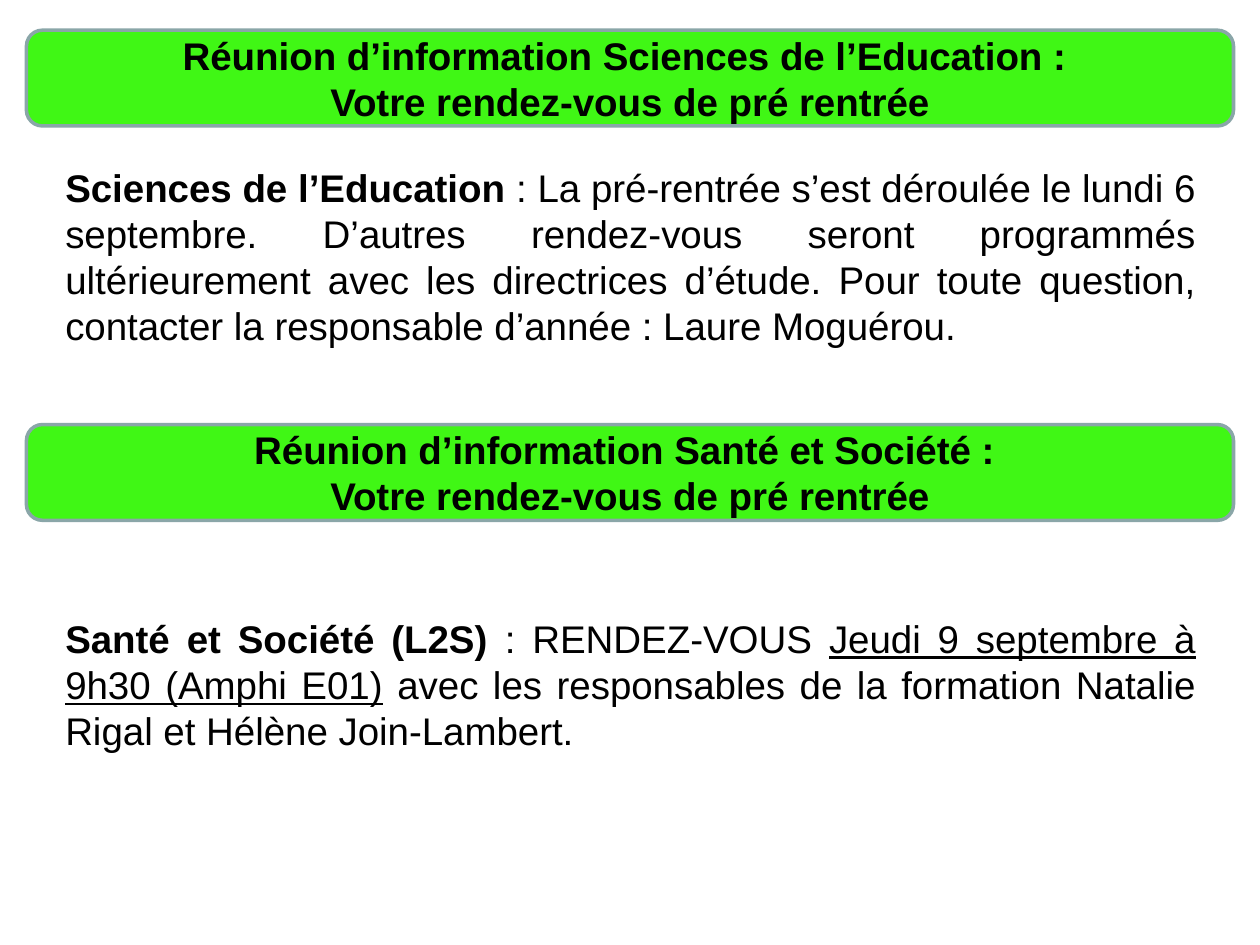
from pptx import Presentation
from pptx.dml.color import RGBColor
from pptx.enum import shapes, text
from pptx.util import Inches, Pt

GREEN = RGBColor(0x40, 0xF7, 0x15)
GREY = RGBColor(0x8A, 0xA6, 0xA8)
BLACK = RGBColor(0, 0, 0)


def add_run(p, words, bold=False, underline=False):
    r = p.add_run()
    r.text = words
    r.font.name = "Arial"
    r.font.size = Pt(22)
    r.font.color.rgb = BLACK
    r.font.bold = bold
    r.font.underline = underline


def add_banner(slide, top, lines):
    sp = slide.shapes.add_shape(
        shapes.MSO_SHAPE.ROUNDED_RECTANGLE,
        Inches(0.21), Inches(top), Inches(9.58), Inches(0.76))
    sp.shadow.inherit = False
    sp.fill.solid()
    sp.fill.fore_color.rgb = GREEN
    sp.line.color.rgb = GREY
    sp.line.width = Pt(2)
    tf = sp.text_frame
    tf.word_wrap = True
    tf.vertical_anchor = text.MSO_ANCHOR.MIDDLE
    for i, line in enumerate(lines):
        p = tf.add_paragraph() if i else tf.paragraphs[0]
        p.alignment = text.PP_ALIGN.CENTER
        add_run(p, line, bold=True)


def add_body(slide, top, height, runs):
    """Add a justified paragraph from (words, bold, underline) runs."""
    sp = slide.shapes.add_textbox(
        Inches(0.42), Inches(top), Inches(9.17), Inches(height))
    tf = sp.text_frame
    tf.word_wrap = True
    tf.auto_size = text.MSO_AUTO_SIZE.SHAPE_TO_FIT_TEXT
    p = tf.paragraphs[0]
    p.alignment = text.PP_ALIGN.JUSTIFY
    for words, bold, underline in runs:
        add_run(p, words, bold, underline)


def main():
    prs = Presentation()
    prs.slide_width, prs.slide_height = Inches(10), Inches(7.5)
    slide = prs.slides.add_slide(prs.slide_layouts[6])

    subtitle = "Votre rendez-vous de pré rentrée"
    add_body(slide, 1.25, 1.58, [
        ("Sciences de l’Education ", True, False),
        (": La pré-rentrée s’est déroulée le lundi 6 septembre. "
         "D’autres rendez-vous seront programmés ultérieurement avec les "
         "directrices d’étude. Pour toute question, contacter la "
         "responsable d’année : Laure Moguérou.", False, False),
    ])
    add_banner(slide, 0.24, [
        "Réunion d’information Sciences de l’Education : ", subtitle])
    add_banner(slide, 3.37, [
        "Réunion d’information Santé et Société : ", subtitle])
    add_body(slide, 4.83, 1.21, [
        ("Santé et Société (L2S) ", True, False),
        (": RENDEZ-VOUS ", False, False),
        ("Jeudi 9 septembre à 9h30 (Amphi E01)", False, True),
        (" avec les responsables de la formation Natalie Rigal et "
         "Hélène Join-Lambert. ", False, False),
    ])
    prs.save("out.pptx")


if __name__ == "__main__":
    main()
